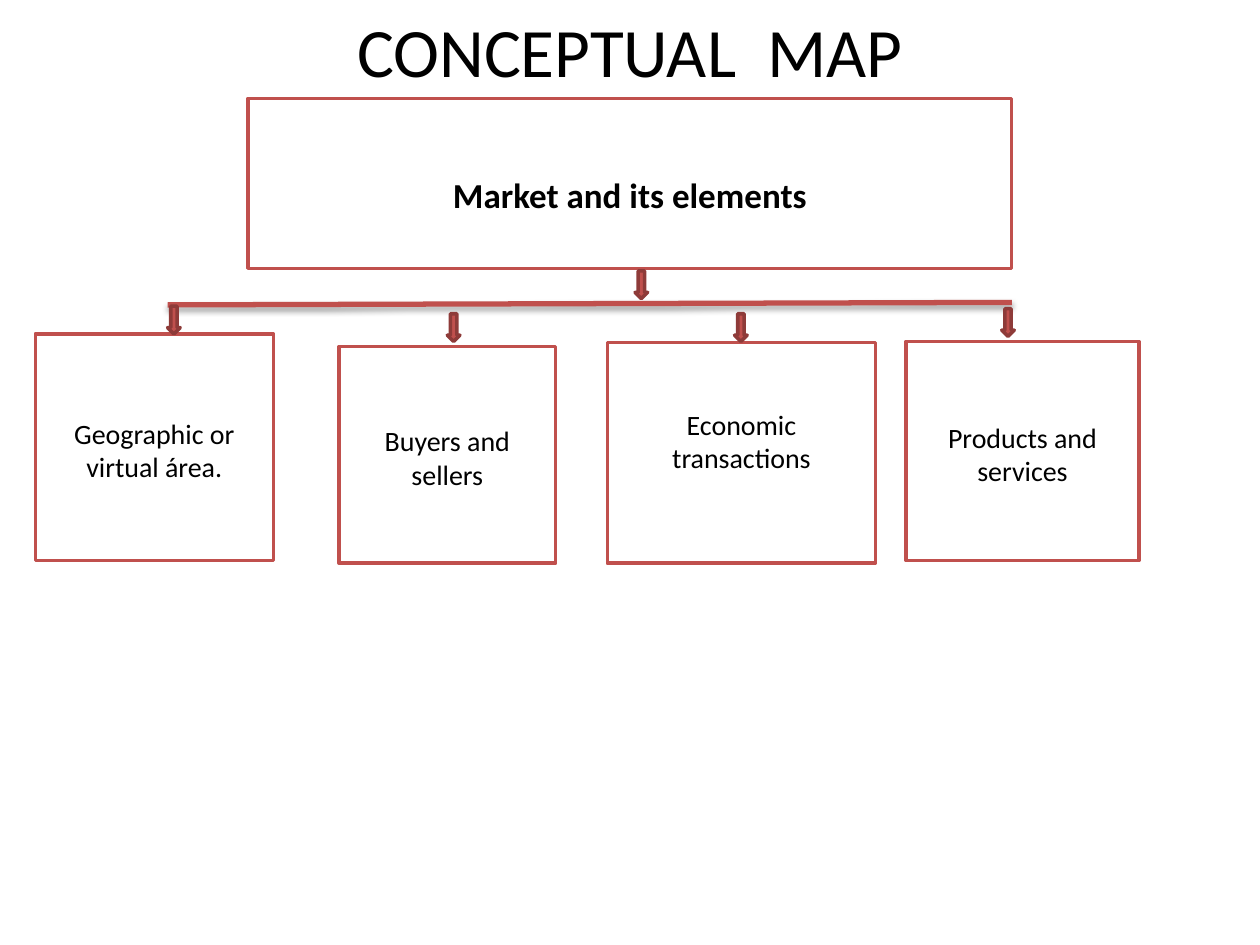
import pptx
import pptx.util
import pptx.dml.color
import pptx.enum.shapes
import pptx.enum.text
import pptx.oxml
import pptx.oxml.ns

Pt = pptx.util.Pt
SHAPE = pptx.enum.shapes.MSO_SHAPE

COLORS = {"white": "FFFFFF", "black": "000000", "red": "C0504D", "dark_red": "8E3B39"}
FONT = "Calibri"
INSET = 3.6

TITLE = ("CONCEPTUAL  MAP", (36, 0.72, 648, 55.44))
# text, (left, top, width, height), size, bold, extra top inset, extra bottom inset
BOXES = [
    ("Market and its elements", (141.84, 56.16, 436.32, 97.2), 20, True, 13, 0),
    ("Geographic or virtual área.", (20.16, 190.8, 136.08, 129.6), 16, False, 3, 0),
    ("Buyers and sellers", (193.68, 198, 123.84, 123.84), 16, False, 3, 0),
    ("Economic transactions", (347.04, 195.84, 153.36, 126), 16, False, 0, 14),
    ("Products and services", (517.68, 195.12, 133.2, 125.28), 16, False, 3, 0),
]
BAR = (95.76, 174.24, 578.16, 172.8)
# centre x, centre y of each downward arrow
ARROWS = [(99.36, 182.88), (259.2, 187.2), (423.36, 187.2), (576, 184.32), (366.48, 162.72)]
ARROW_LENGTH, ARROW_WIDTH = 15.84, 7.2


def color(name):
    return pptx.dml.color.RGBColor.from_string(COLORS[name])


def points(values):
    return [Pt(v) for v in values]


def write(s, text, size, bold=False, top=0, bottom=0):
    tf = s.text_frame
    tf.word_wrap = True
    tf.vertical_anchor = pptx.enum.text.MSO_ANCHOR.MIDDLE
    tf.margin_top, tf.margin_bottom = Pt(INSET + top), Pt(INSET + bottom)
    tf.text = text
    p = tf.paragraphs[0]
    p.alignment = pptx.enum.text.PP_ALIGN.CENTER
    font = p.runs[0].font
    font.name, font.size, font.bold = FONT, Pt(size), bold
    font.color.rgb = color("black")


def add_filled(slide, kind, place, fill, line):
    s = slide.shapes.add_shape(kind, *points(place))
    s.shadow.inherit = False
    s.fill.solid()
    s.fill.fore_color.rgb = color(fill)
    s.line.color.rgb = color(line)
    s.line.width = Pt(2)
    return s


def add_bar(slide):
    """Draw the branching line with its soft shadow below."""
    s = slide.shapes.add_connector(pptx.enum.shapes.MSO_CONNECTOR.STRAIGHT, *points(BAR))
    s.line.color.rgb = color("red")
    s.line.width = Pt(3)
    s._element.spPr.append(pptx.oxml.parse_xml(
        f'<a:effectLst {pptx.oxml.ns.nsdecls("a")}>'
        f'<a:outerShdw blurRad="{Pt(3.1)}" dist="{Pt(1.8)}" dir="5400000" rotWithShape="0">'
        f'<a:srgbClr val="{COLORS["black"]}"><a:alpha val="35000"/></a:srgbClr>'
        '</a:outerShdw></a:effectLst>'))


def main():
    prs = pptx.Presentation()
    prs.slide_width, prs.slide_height = Pt(720), Pt(540)
    slide = prs.slides.add_slide(prs.slide_layouts[6])

    text, place = TITLE
    write(slide.shapes.add_textbox(*points(place)), text, 39.6)

    for text, place, size, bold, top, bottom in BOXES:
        s = add_filled(slide, SHAPE.RECTANGLE, place, "white", "red")
        write(s, text, size, bold, top, bottom)

    add_bar(slide)

    for x, y in ARROWS:
        place = (x - ARROW_LENGTH / 2, y - ARROW_WIDTH / 2, ARROW_LENGTH, ARROW_WIDTH)
        s = add_filled(slide, SHAPE.RIGHT_ARROW, place, "red", "dark_red")
        s.rotation = 90

    prs.save("out.pptx")


if __name__ == "__main__":
    main()
